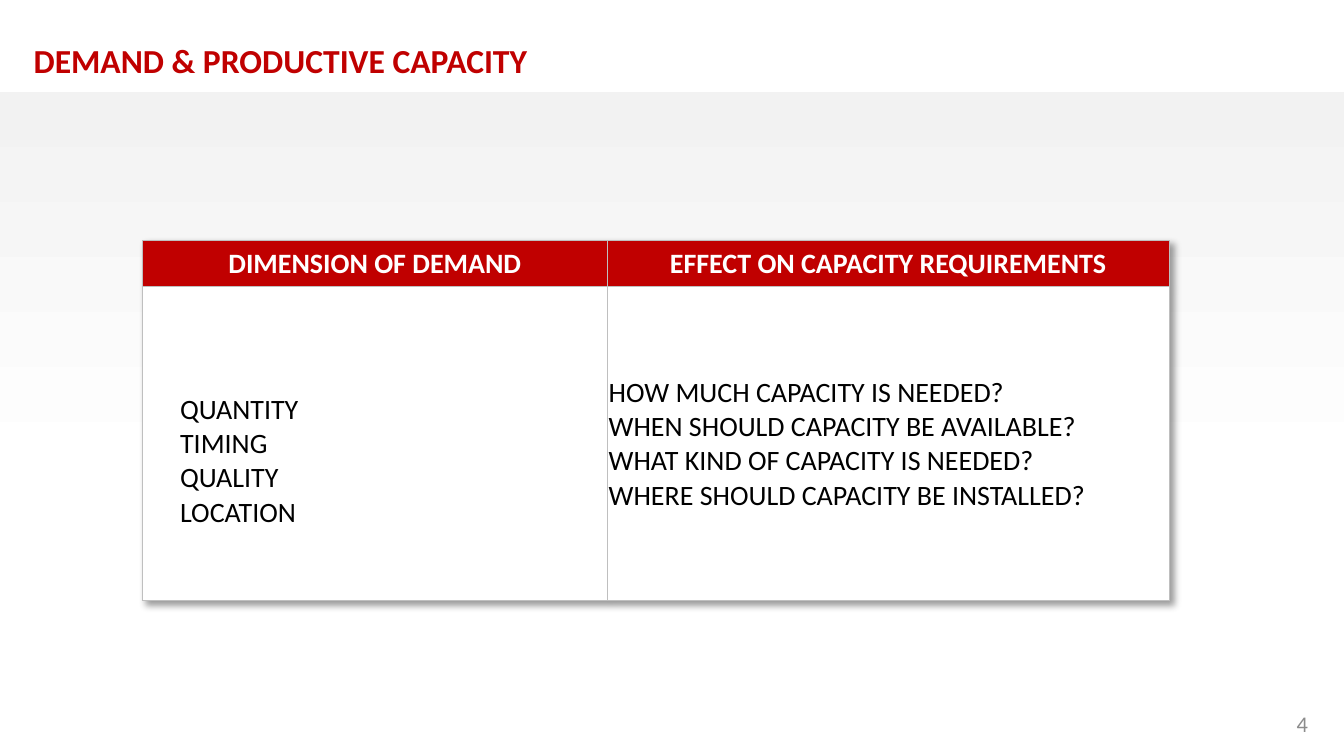
import pptx
import pptx.dml.color
import pptx.enum.shapes
import pptx.enum.text
import pptx.oxml
import pptx.oxml.ns
import pptx.util

Pt = pptx.util.Pt
RGBColor = pptx.dml.color.RGBColor
PP_ALIGN = pptx.enum.text.PP_ALIGN
MSO_ANCHOR = pptx.enum.text.MSO_ANCHOR

RED = RGBColor(0xC0, 0x00, 0x00)
WHITE = RGBColor(0xFF, 0xFF, 0xFF)
BLACK = RGBColor(0x00, 0x00, 0x00)
PALE_GREY = RGBColor(0xF2, 0xF2, 0xF2)
BORDER_GREY = RGBColor(0xBF, 0xBF, 0xBF)
NUMBER_GREY = RGBColor(0x8C, 0x8C, 0x8C)
NAMESPACE = pptx.oxml.ns.nsdecls("a")


def format_paragraph(para, size, color, bold=False, align=PP_ALIGN.LEFT):
    para.alignment = align
    para.font.name = "Calibri"
    para.font.size = Pt(size)
    para.font.bold = bold
    para.font.color.rgb = color


def add_borders(cell):
    properties = cell._tc.get_or_add_tcPr()
    for index, side in enumerate("LRTB"):
        properties.insert(index, pptx.oxml.parse_xml(
            f'<a:ln{side} {NAMESPACE} w="{Pt(0.75)}"><a:solidFill>'
            f'<a:srgbClr val="{BORDER_GREY}"/></a:solidFill></a:ln{side}>'))


deck = pptx.Presentation()
deck.slide_width, deck.slide_height = Pt(720), Pt(405)
page = deck.slides.add_slide(deck.slide_layouts[5])

# Shaded backdrop below the title
backdrop = page.shapes.add_shape(
    pptx.enum.shapes.MSO_SHAPE.RECTANGLE, Pt(0), Pt(49.5), Pt(720), Pt(355.5))
backdrop.shadow.inherit = False
backdrop.line.fill.background()
backdrop.fill.gradient()
backdrop.fill.gradient_angle = 270
for stop, position, color in zip(backdrop.fill.gradient_stops, (0, 0.58), (PALE_GREY, WHITE)):
    stop.position = position
    stop.color.rgb = color

# Title
title = page.shapes.title
title.left, title.top, title.width, title.height = Pt(10.8), Pt(18), Pt(324.7), Pt(28.8)
title.text_frame.text = "DEMAND & PRODUCTIVE CAPACITY"
title.text_frame.word_wrap = False
title.text_frame.vertical_anchor = MSO_ANCHOR.TOP
format_paragraph(title.text_frame.paragraphs[0], 18, RED, bold=True)

# Demand table
columns = [
    ("DIMENSION OF DEMAND", 249.1, ["QUANTITY", "TIMING", "QUALITY", "LOCATION"]),
    ("EFFECT ON CAPACITY REQUIREMENTS", 301, [
        "HOW MUCH CAPACITY IS NEEDED?",
        "WHEN SHOULD CAPACITY BE AVAILABLE?",
        "WHAT KIND OF CAPACITY IS NEEDED?",
        "WHERE SHOULD CAPACITY BE INSTALLED?",
    ]),
]
table = page.shapes.add_table(2, 2, Pt(76.3), Pt(128.9), Pt(550.1), Pt(193)).table
table.rows[0].height, table.rows[1].height = Pt(24.5), Pt(168.5)
for column, (heading, width, lines) in enumerate(columns):
    table.columns[column].width = Pt(width)
    header, body = table.cell(0, column), table.cell(1, column)
    header.text = heading
    body.text = "\n".join(lines)
    for cell, fill in ((header, RED), (body, WHITE)):
        cell.fill.solid()
        cell.fill.fore_color.rgb = fill
        cell.vertical_anchor = MSO_ANCHOR.MIDDLE
        cell.margin_left = cell.margin_right = cell.margin_top = Pt(0.7)
        cell.margin_bottom = Pt(0)
        add_borders(cell)
    format_paragraph(header.text_frame.paragraphs[0], 15, WHITE, True, PP_ALIGN.CENTER)
    for para in body.text_frame.paragraphs:
        format_paragraph(para, 15, BLACK)
dimensions = table.cell(1, 0)
dimensions.margin_left, dimensions.margin_top = Pt(20.2), Pt(19)

table._tbl.tblPr.insert(0, pptx.oxml.parse_xml(
    f'<a:effectLst {NAMESPACE}><a:outerShdw blurRad="{Pt(4)}" dist="{Pt(3)}" dir="2700000" '
    'algn="tl" rotWithShape="0"><a:srgbClr val="000000"><a:alpha val="40000"/></a:srgbClr>'
    '</a:outerShdw></a:effectLst>'))

# Page number
number_box = page.shapes.add_textbox(Pt(540), Pt(376.6), Pt(167.8), Pt(21.6))
number_box.text_frame.text = "4"
number_box.text_frame.word_wrap = True
number_box.text_frame.vertical_anchor = MSO_ANCHOR.MIDDLE
format_paragraph(number_box.text_frame.paragraphs[0], 12, NUMBER_GREY, align=PP_ALIGN.RIGHT)

deck.save("out.pptx")
